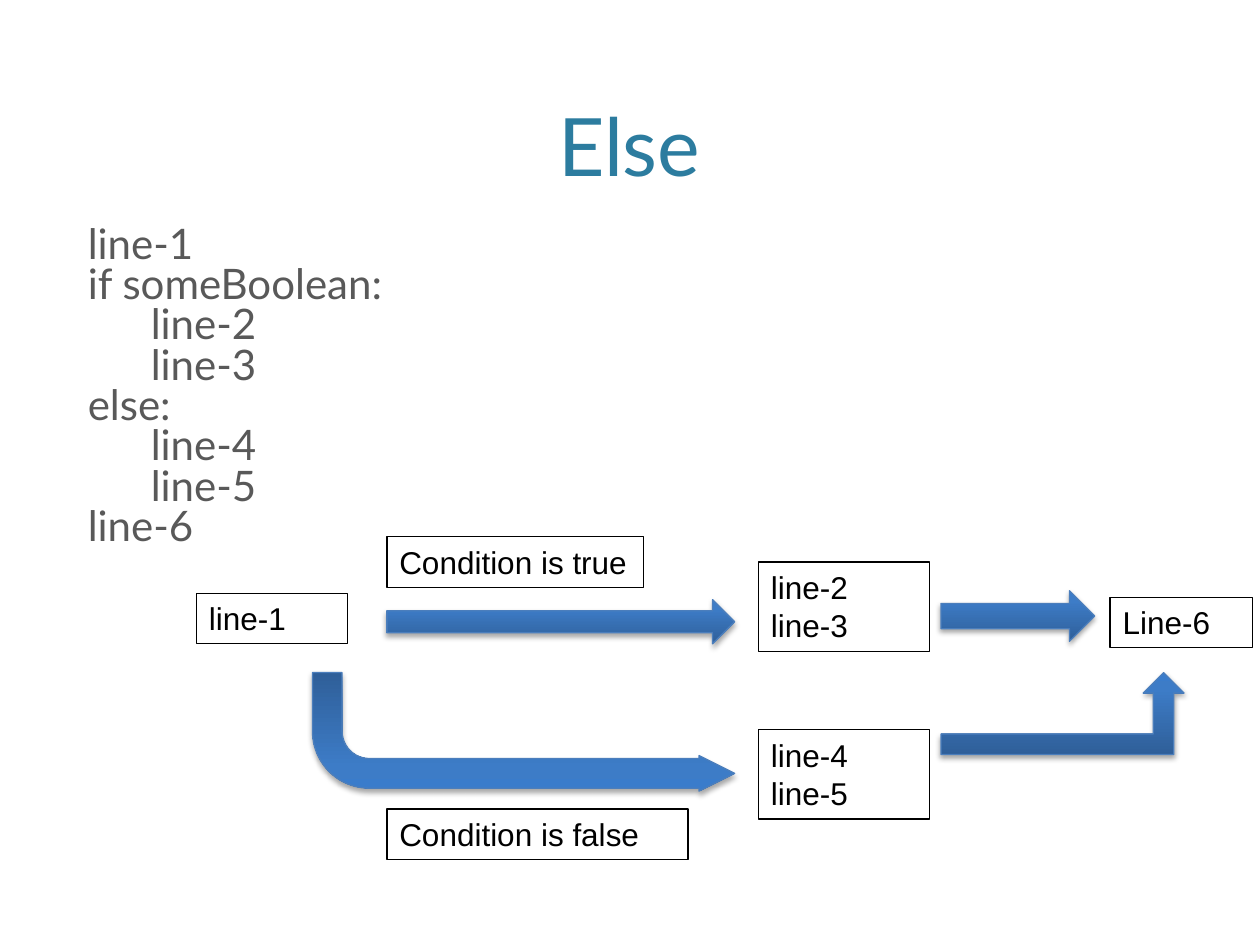
from copy import deepcopy
from lxml.etree import SubElement
from pptx import Presentation
from pptx.dml.color import RGBColor
from pptx.enum.shapes import MSO_SHAPE
from pptx.enum.text import MSO_ANCHOR, MSO_AUTO_SIZE, PP_ALIGN
from pptx.oxml.ns import qn
from pptx.util import Cm, Pt

TEAL = RGBColor(0x2C, 0x7C, 0x9F)
GRAY = RGBColor(0x59, 0x59, 0x59)
BLACK = RGBColor(0, 0, 0)
EDGE = RGBColor(0x4B, 0x7E, 0xBC)
DARK = RGBColor(0x2F, 0x5F, 0x99)
MID = RGBColor(0x3D, 0x7C, 0xC7)
LIGHT = RGBColor(0x3A, 0x7C, 0xCB)


def add_text(place, text, font, size, color):
    box = slide.shapes.add_textbox(*map(Cm, place))
    frame = box.text_frame
    frame.word_wrap = True
    frame.text = text
    for para in frame.paragraphs:
        for run in para.runs:
            run.font.name = font
            run.font.size = Pt(size)
            run.font.color.rgb = color
    return box


def add_arrow(kind, place):
    arrow = slide.shapes.add_shape(kind, *map(Cm, place))
    arrow.line.color.rgb = EDGE
    arrow.line.width = Pt(0.75)
    arrow.fill.gradient()
    arrow.fill.gradient_angle = 90
    props = arrow._element.spPr
    stops = props.find(qn("a:gradFill")).find(qn("a:gsLst"))
    stops.append(deepcopy(stops[-1]))
    shades = [(0, DARK), (0.8, MID), (1, LIGHT)]
    for stop, (pos, color) in zip(arrow.fill.gradient_stops, shades):
        stop.color.rgb = color
        stop.position = pos
    arrow.shadow.inherit = False
    glow = SubElement(props.find(qn("a:effectLst")), qn("a:outerShdw"),
                      blurRad=str(Pt(3.1)), dist=str(Pt(1.8)),
                      dir="5400000", rotWithShape="0")
    tint = SubElement(glow, qn("a:srgbClr"), val="000000")
    SubElement(tint, qn("a:alpha"), val="35000")
    return arrow


deck = Presentation()
deck.slide_width = Cm(25.4)
deck.slide_height = Cm(19.05)
slide = deck.slides.add_slide(deck.slide_layouts[6])

title = add_text((1.52, 0.3, 22.33, 3.71), "Else", "Lato", 46, TEAL)
title.text_frame.vertical_anchor = MSO_ANCHOR.BOTTOM
title.text_frame.paragraphs[0].alignment = PP_ALIGN.CENTER

code = "line-1\nif someBoolean:\n\tline-2\n\tline-3\nelse:\n\tline-4\n\tline-5\nline-6"
body = add_text((1.52, 4.45, 22.33, 12.07), code, "Lato", 24, GRAY)
for para in body.text_frame.paragraphs:
    para.line_spacing = 0.8
    para._p.get_or_add_pPr().set("defTabSz", str(Cm(1.27)))

boxes = [
    ("line-1", 3.96, 11.96, 3.05, 1.02),
    ("Condition is true", 7.8, 10.82, 5.18, 1.02),
    ("Condition is false", 7.8, 16.31, 6.07, 1.02),
    ("line-2\nline-3", 15.29, 11.33, 3.45, 1.8),
    ("line-4\nline-5", 15.29, 14.71, 3.45, 1.8),
    ("Line-6", 22.38, 12.04, 2.87, 1.02),
]
for text, *place in boxes:
    box = add_text(place, text, "Arial", 18, BLACK)
    box.text_frame.auto_size = MSO_AUTO_SIZE.SHAPE_TO_FIT_TEXT
    box.line.color.rgb = BLACK
    box.line.width = Pt(0.75)

add_arrow(MSO_SHAPE.RIGHT_ARROW, (7.8, 12.09, 7.01, 0.89))
add_arrow(MSO_SHAPE.RIGHT_ARROW, (18.97, 11.91, 3.1, 1.02))
add_arrow(MSO_SHAPE.BENT_UP_ARROW, (18.97, 13.56, 4.9, 1.65))
bent = add_arrow(MSO_SHAPE.BENT_ARROW, (6.3, 13.56, 8.51, 2.39))
bent._element.spPr.xfrm.set("flipV", "1")
for i, value in enumerate((0.25, 0.15, 0.3, 0.48)):
    bent.adjustments[i] = value

deck.save("out.pptx")
